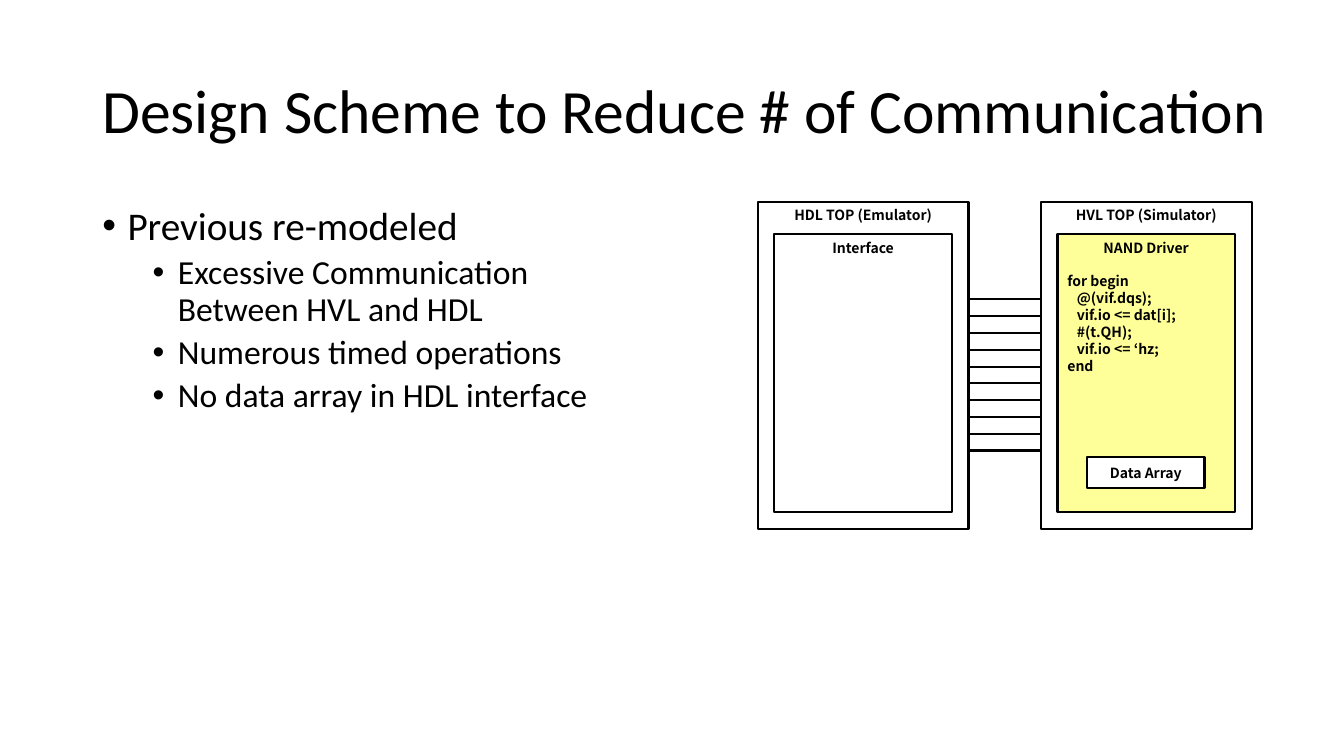
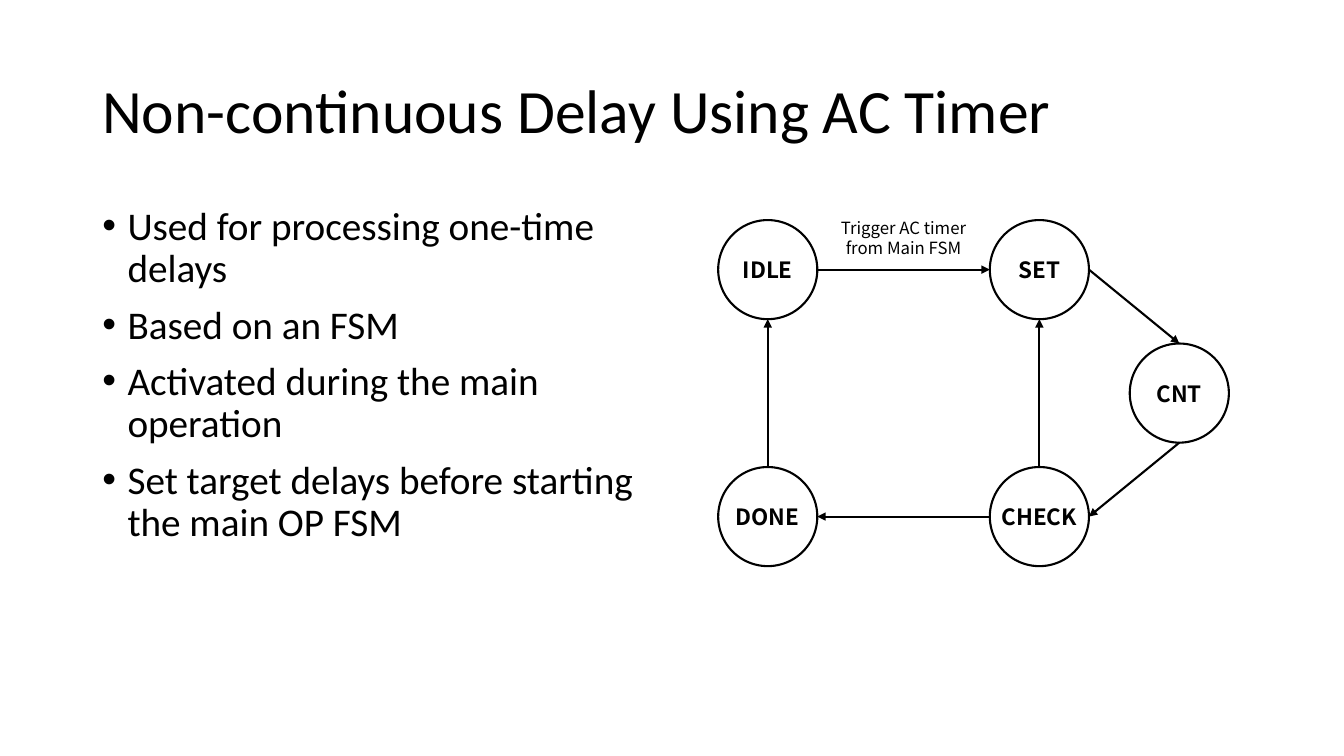
from dataclasses import dataclass

from lxml import etree
from pptx import Presentation
from pptx.dml.color import RGBColor
from pptx.enum.shapes import MSO_CONNECTOR, MSO_SHAPE
from pptx.enum.text import MSO_ANCHOR, PP_ALIGN
from pptx.oxml.ns import qn
from pptx.util import Emu, Inches, Pt

RECT, OVAL = MSO_SHAPE.RECTANGLE, MSO_SHAPE.OVAL
STRAIGHT = MSO_CONNECTOR.STRAIGHT
TOP, MIDDLE = MSO_ANCHOR.TOP, MSO_ANCHOR.MIDDLE
LEFT, CENTER = PP_ALIGN.LEFT, PP_ALIGN.CENTER

COLORS = {"ink": "000000", "paper": "FFFFFF", "driver": "FFFF99"}
COLUMNS, ROWS = 160, 90
CELL = Inches(7.5) // ROWS
LINE_WIDTH = Pt(1.5)

FONTS = {
    "title": {"name": "Calibri", "size": Pt(44), "bold": False},
    "point": {"name": "Calibri", "size": Pt(28), "bold": False},
    "subpoint": {"name": "Calibri", "size": Pt(24), "bold": False},
    "block": {"name": "Noto Sans CJK KR", "size": Pt(10), "bold": True},
    "state": {"name": "Noto Sans CJK KR", "size": Pt(16), "bold": True},
    "label": {"name": "Noto Sans CJK KR", "size": Pt(12), "bold": False},
}
BULLETS = {
    "point": {"indent": 0.25, "space": Pt(10)},
    "subpoint": {"indent": 0.75, "space": Pt(5)},
}
HANGING = Inches(0.25)


@dataclass
class Box:
    """An area in grid columns and rows."""
    x: float
    y: float
    w: float
    h: float

    def inner(self, x, y, w, h):
        """Return an area placed from this one's top left corner."""
        return Box(self.x + x, self.y + y, w, h)

    def at(self, across, down):
        """Return the point at the given shares of width and height."""
        return self.x + self.w * across, self.y + self.h * down

    def emu(self):
        """Return left, top, width and height as lengths."""
        return [cells(n) for n in (self.x, self.y, self.w, self.h)]


TITLE = Box(11, 4.8, 141.1, 17.4)
BODY = Box(11, 24, 68, 57.1)
TOWERS = Box(90.2, 24, 58.8, 39)
MACHINE = Box(85.5, 26.2, 60.8, 41.2)


def cells(count):
    """Turn grid cells into a length."""
    return Emu(round(count * CELL))


def color(name):
    """Look up a palette colour."""
    return RGBColor.from_string(COLORS[name])


def apply(target, formats):
    """Set each format value on the target."""
    for key, value in formats.items():
        setattr(target, key, value)


def write(paragraph, text, style, **formats):
    """Put one styled run into a paragraph."""
    apply(paragraph, formats)
    run = paragraph.add_run()
    run.text = text
    apply(run.font, FONTS[style])
    run.font.color.rgb = color("ink")


def paragraphs(frame, texts):
    """Pair each text with a paragraph of the frame."""
    for i, text in enumerate(texts):
        yield (frame.add_paragraph() if i else frame.paragraphs[0]), text


def text_frame(slide, box, anchor=TOP):
    """Add a wrapping text box and return its frame."""
    frame = slide.shapes.add_textbox(*box.emu()).text_frame
    apply(frame, {"word_wrap": True, "vertical_anchor": anchor})
    return frame


def outline(slide, kind, box, text, style="block", fill=None, anchor=TOP):
    """Add an outlined shape with a centred caption and return its frame."""
    shape = slide.shapes.add_shape(kind, *box.emu())
    shape.shadow.inherit = False
    if fill:
        shape.fill.solid()
        shape.fill.fore_color.rgb = color(fill)
    else:
        shape.fill.background()
    shape.line.color.rgb = color("ink")
    shape.line.width = LINE_WIDTH
    frame = shape.text_frame
    apply(frame, {"word_wrap": kind == RECT, "vertical_anchor": anchor})
    write(frame.paragraphs[0], text, style, alignment=CENTER)
    return frame


def link(slide, start, end, arrow=False):
    """Draw a line between two grid points."""
    line = slide.shapes.add_connector(STRAIGHT, *map(cells, start + end))
    line.line.color.rgb = color("ink")
    line.line.width = LINE_WIDTH
    if arrow:
        etree.SubElement(line.line._get_or_add_ln(), qn("a:tailEnd"), type="triangle")
    etree.SubElement(line._element.spPr, qn("a:effectLst"))


def heading(slide, box, text):
    """Write the slide title."""
    frame = text_frame(slide, box, MIDDLE)
    write(frame.paragraphs[0], text, "title", line_spacing=0.9)


def bullet_list(slide, box, items):
    """Write bulleted points given as level and text."""
    for i, (paragraph, (level, text)) in enumerate(paragraphs(text_frame(slide, box), items)):
        bullet = BULLETS[level]
        properties = paragraph._p.get_or_add_pPr()
        properties.set("marL", str(Inches(bullet["indent"])))
        properties.set("indent", str(-HANGING))
        etree.SubElement(properties, qn("a:buFont"), typeface="Arial")
        etree.SubElement(properties, qn("a:buChar"), char="•")
        write(paragraph, text, level, line_spacing=0.9,
              space_before=bullet["space"] if i else Pt(0))


def tower(slide, box, name, part, fill=None):
    """Draw a top module with its inner part; return the part's box and frame."""
    margin, header = 2, 3.9
    outline(slide, RECT, box, name)
    inside = box.inner(margin, header, box.w - 2 * margin, box.h - header - margin)
    return inside, outline(slide, RECT, inside, part, fill=fill)


def signal_bus(slide, box, count):
    """Draw evenly spaced signal lines across the box."""
    for i in range(count):
        share = i / (count - 1)
        link(slide, box.at(0, share), box.at(1, share))


def co_model(slide, box):
    """Draw the emulator and simulator towers with the signals between them."""
    width = 25.1
    gap = box.w - 2 * width
    signal_bus(slide, box.inner(width, 11.64, gap, 18), 10)
    tower(slide, box.inner(0, 0, width, box.h), "HDL TOP (Emulator)", "Interface")
    driver, frame = tower(slide, box.inner(width + gap, 0, width, box.h),
                          "HVL TOP (Simulator)", "NAND Driver", "driver")
    frame.paragraphs[0].space_after = Pt(12)
    code = ["for begin", "   @(vif.dqs);", "   vif.io <= dat[i];",
            "   #(t.QH);", "   vif.io <= ‘hz;", "end"]
    for text in code:
        write(frame.add_paragraph(), text, "block", alignment=LEFT)
    outline(slide, RECT, driver.inner(3.5, 26.5, 14, 3.7), "Data Array",
            fill="paper", anchor=MIDDLE)


def state_machine(slide, box):
    """Draw the timer states, their transitions and the trigger label."""
    size = 11.8
    places = {"IDLE": (0, 0), "SET": (0.66, 0), "CNT": (1, 0.5),
              "CHECK": (0.66, 1), "DONE": (0, 1)}
    sides = {"top": (0.5, 0), "right": (1, 0.5), "bottom": (0.5, 1), "left": (0, 0.5)}
    transitions = [
        ("IDLE", "right", "SET", "left"), ("SET", "right", "CNT", "top"),
        ("CNT", "bottom", "CHECK", "right"), ("CHECK", "left", "DONE", "right"),
        ("CHECK", "top", "SET", "bottom"), ("DONE", "top", "IDLE", "bottom"),
    ]
    states = {name: box.inner((box.w - size) * across, (box.h - size) * down, size, size)
              for name, (across, down) in places.items()}
    for source, leaving, target, entering in transitions:
        link(slide, states[source].at(*sides[leaving]),
             states[target].at(*sides[entering]), arrow=True)
    for name, state in states.items():
        outline(slide, OVAL, state, name, "state", anchor=MIDDLE)
    width = 20
    middle = (states["IDLE"].x + states["SET"].x + size) / 2
    trigger = text_frame(slide, Box(middle - width / 2, box.y - 0.9, width, 7.3))
    write(trigger.paragraphs[0], "Trigger AC timer from Main FSM", "label", alignment=CENTER)


def topic_slide(deck, title, items, diagram, box):
    """Build a slide with a title, points on the left and a diagram on the right."""
    slide = deck.slides.add_slide(deck.slide_layouts[6])
    heading(slide, TITLE, title)
    bullet_list(slide, BODY, items)
    diagram(slide, box)


def main():
    """Build and save the deck."""
    deck = Presentation()
    apply(deck, {"slide_width": cells(COLUMNS), "slide_height": cells(ROWS)})
    topic_slide(deck, "Design Scheme to Reduce # of Communication", [
        ("point", "Previous re-modeled"),
        ("subpoint", "Excessive Communication Between HVL and HDL"),
        ("subpoint", "Numerous timed operations"),
        ("subpoint", "No data array in HDL interface"),
    ], co_model, TOWERS)
    topic_slide(deck, "Non-continuous Delay Using AC Timer", [
        ("point", "Used for processing one-time delays"),
        ("point", "Based on an FSM"),
        ("point", "Activated during the main operation"),
        ("point", "Set target delays before starting the main OP FSM"),
    ], state_machine, MACHINE)
    deck.save("out.pptx")


if __name__ == "__main__":
    main()
